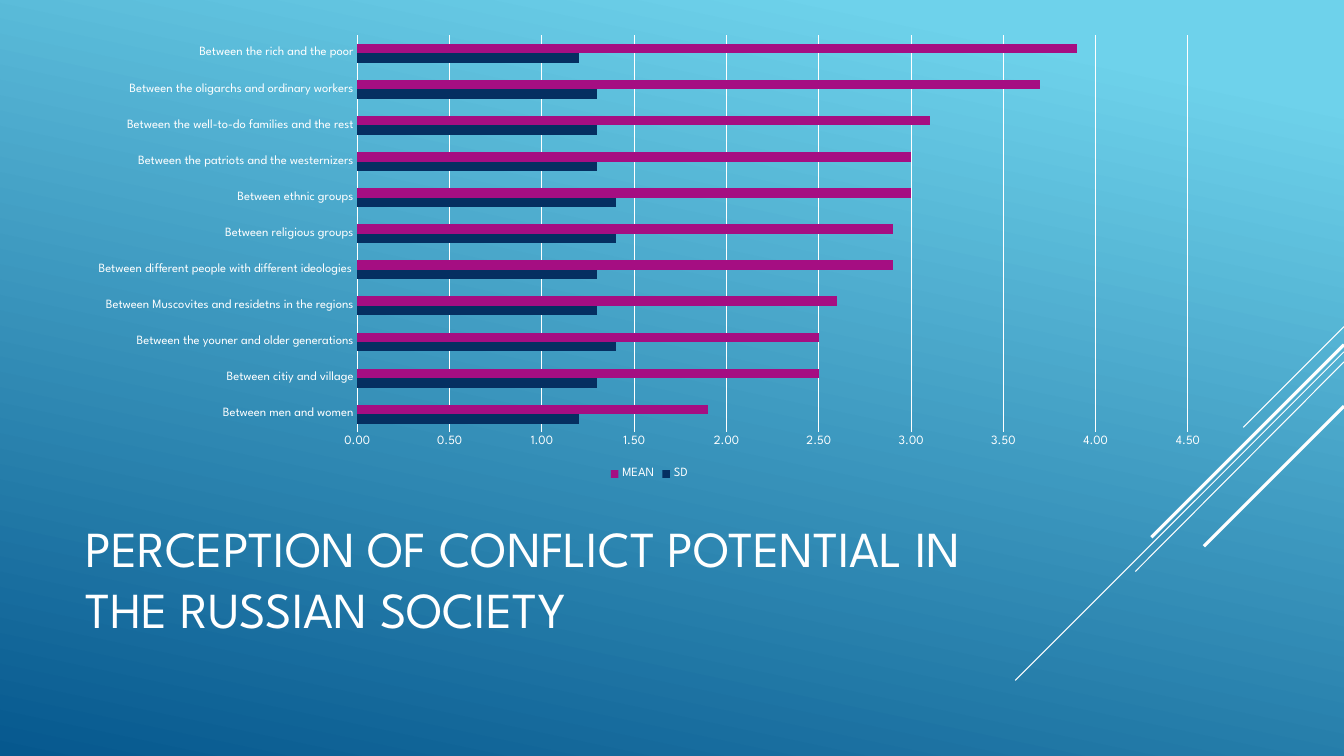
"""Build the slide on perceived conflict potential in the Russian society."""
from lxml import etree
from pptx import Presentation
from pptx.chart.data import CategoryChartData
from pptx.dml.color import RGBColor
from pptx.enum.chart import XL_CHART_TYPE, XL_LEGEND_POSITION, XL_TICK_MARK
from pptx.enum.shapes import MSO_CONNECTOR
from pptx.enum.text import MSO_ANCHOR, PP_ALIGN
from pptx.oxml.ns import qn
from pptx.util import Inches, Pt

BAR_CLUSTERED = XL_CHART_TYPE.BAR_CLUSTERED
BOTTOM = XL_LEGEND_POSITION.BOTTOM
NO_TICK = XL_TICK_MARK.NONE
STRAIGHT = MSO_CONNECTOR.STRAIGHT
MIDDLE = MSO_ANCHOR.MIDDLE
LEFT = PP_ALIGN.LEFT
WHITE = RGBColor(0xFF, 0xFF, 0xFF)
SKY = RGBColor(0x6E, 0xD2, 0xEB)
BLUE = RGBColor(0x06, 0x58, 0x8E)
NAVY = RGBColor(0x05, 0x2F, 0x61)
MAGENTA = RGBColor(0xA5, 0x0E, 0x82)
FONT = "League Spartan"


def set_font(font, size):
    font.name = FONT
    font.size = Pt(size)
    font.bold = False
    font.color.rgb = WHITE


def set_line(line, width):
    line.color.rgb = WHITE
    line.width = Pt(width)


prs = Presentation()
prs.slide_width = Inches(13.33)
prs.slide_height = Inches(7.5)
s = prs.slides.add_slide(prs.slide_layouts[5])

fill = s.background.fill
fill.gradient()
fill.gradient_angle = 360 - 102
for stop, position, color in zip(fill.gradient_stops, (0.1, 1), (SKY, BLUE)):
    stop.position = position
    stop.color.rgb = color

diagonals = [
    (3.24, 12.33, 4.24, 0.75),
    (3.49, 10.07, 6.75, 0.75),
    (3.59, 11.26, 5.67, 0.75),
    (3.42, 11.42, 5.33, 2.25),
    (4.03, 11.94, 5.42, 2.25),
]
for top, x, bottom, width in diagonals:
    cxn = s.shapes.add_connector(
        STRAIGHT, Inches(13.33), Inches(top), Inches(x), Inches(bottom))
    set_line(cxn.line, width)
    etree.SubElement(cxn._element.spPr, qn("a:effectLst"))

title = s.shapes.title
title.left, title.top = Inches(0.75), Inches(4.91)
title.width, title.height = Inches(9.33), Inches(1.65)
tf = title.text_frame
tf.text = "PERCEPTION OF CONFLICT POTENTIAL IN THE RUSSIAN SOCIETY"
tf.word_wrap = True
tf.vertical_anchor = MIDDLE
p = tf.paragraphs[0]
p.alignment = LEFT
p.line_spacing = 1.0
set_font(p.font, 36)

conflicts = [
    ("men and women", 1.2, 1.9),
    ("citiy and village", 1.3, 2.5),
    ("the youner and older generations", 1.4, 2.5),
    ("Muscovites and residetns in the regions", 1.3, 2.6),
    ("different people with different ideologies", 1.3, 2.9),
    ("religious groups", 1.4, 2.9),
    ("ethnic groups", 1.4, 3.0),
    ("the patriots and the westernizers", 1.3, 3.0),
    ("the well-to-do families and the rest", 1.3, 3.1),
    ("the oligarchs and ordinary workers", 1.3, 3.7),
    ("the rich and the poor", 1.2, 3.9),
]
groups, deviations, means = zip(*conflicts)
data = CategoryChartData(number_format="#,##0.00")
data.categories = [f"Between {group}" for group in groups]
data.add_series("SD", deviations)
data.add_series("MEAN", means)
chart = s.shapes.add_chart(
    BAR_CLUSTERED, Inches(0.75), Inches(0.26), Inches(11.38), Inches(4.54), data).chart
chart.has_title = False
set_font(chart.font, 10)

plot = chart.plots[0]
plot.gap_width = 182
plot.overlap = 0
plot.vary_by_categories = False
for series, color in zip(plot.series, (NAVY, MAGENTA)):
    series.format.fill.solid()
    series.format.fill.fore_color.rgb = color

for axis in (chart.category_axis, chart.value_axis):
    axis.major_tick_mark = NO_TICK
    axis.minor_tick_mark = NO_TICK
    set_font(axis.tick_labels.font, 9)
set_line(chart.category_axis.format.line, 0.75)
chart.category_axis.has_major_gridlines = False

value_axis = chart.value_axis
value_axis.minimum_scale = 0
value_axis.maximum_scale = 4.5
value_axis.major_unit = 0.5
value_axis.format.line.fill.background()
value_axis.has_major_gridlines = True
set_line(value_axis.major_gridlines.format.line, 0.75)
value_axis.tick_labels.number_format = "#,##0.00"
value_axis.tick_labels.number_format_is_linked = False

chart.has_legend = True
chart.legend.position = BOTTOM
chart.legend.include_in_layout = False
set_font(chart.legend.font, 9)

prs.save("out.pptx")
